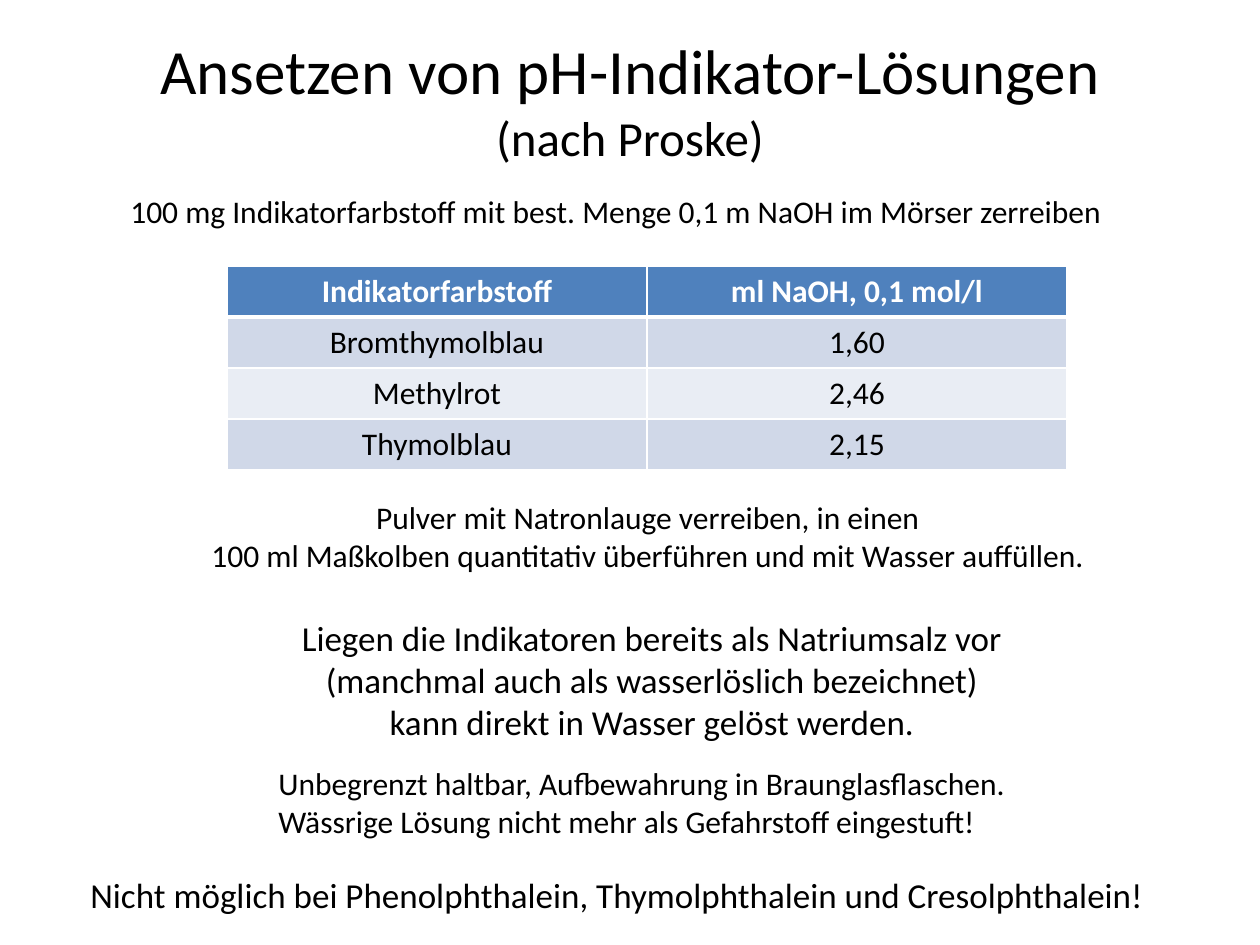
"""Build a slide on preparing pH indicator solutions."""
from lxml import etree
from pptx import Presentation
from pptx.dml.color import RGBColor
from pptx.enum.text import MSO_ANCHOR, PP_ALIGN
from pptx.oxml.ns import qn
from pptx.util import Emu, Pt

LEFT, CENTER = PP_ALIGN.LEFT, PP_ALIGN.CENTER
TOP, MIDDLE = MSO_ANCHOR.TOP, MSO_ANCHOR.MIDDLE
PX = 7257.14
FONT = "Calibri"
BLACK, WHITE, HEADER = "000000", "FFFFFF", "4F81BD"
BANDS = ("D0D8E8", "E9EDF4")

TITLE = [("Ansetzen von pH-Indikator-Lösungen", 36), ("(nach Proske)", 28)]
TITLE_BOX = (63, 20, 1134, 158)

TEXTS = [
    ((118, 186, 1008, 50), 18, LEFT,
     ["100 mg Indikatorfarbstoff mit best. Menge 0,1 m NaOH im Mörser zerreiben"]),
    ((197, 492, 909, 89), 18, CENTER,
     ["Pulver mit Natronlauge verreiben, in einen ",
      "100 ml Maßkolben quantitativ überführen und mit Wasser auffüllen. "]),
    ((286, 610, 732, 140), 20, CENTER,
     ["Liegen die Indikatoren bereits als Natriumsalz vor",
      "(manchmal auch als wasserlöslich bezeichnet)",
      "kann direkt in Wasser gelöst werden."]),
    ((266, 758, 768, 89), 18, LEFT,
     ["Unbegrenzt haltbar, Aufbewahrung in Braunglasflaschen.",
      "Wässrige Lösung nicht mehr als Gefahrstoff eingestuft!"]),
    ((78, 867, 1089, 55), 20, LEFT,
     ["Nicht möglich bei Phenolphthalein, Thymolphthalein und Cresolphthalein!"]),
]

ROWS = [
    ("Indikatorfarbstoff", "ml NaOH, 0,1 mol/l"),
    ("Bromthymolblau", "1,60"),
    ("Methylrot", "2,46"),
    ("Thymolblau", "2,15"),
]
TABLE_BOX = (227, 266, 840, 204)


def px(value):
    return Emu(round(value * PX))


def color(value):
    return RGBColor.from_string(value)


def add_run(paragraph, text, size, fill=BLACK, bold=False):
    run = paragraph.add_run()
    run.text = text
    for name, value in {"name": FONT, "size": Pt(size), "bold": bold}.items():
        setattr(run.font, name, value)
    run.font.color.rgb = color(fill)


def add_box(slide, box, wrap, anchor):
    frame = slide.shapes.add_textbox(*map(px, box)).text_frame
    frame.word_wrap = wrap
    frame.vertical_anchor = anchor
    return frame


def add_title(slide):
    paragraph = add_box(slide, TITLE_BOX, True, MIDDLE).paragraphs[0]
    paragraph.alignment = CENTER
    for index, (text, size) in enumerate(TITLE):
        if index:
            paragraph.add_line_break()
        add_run(paragraph, text, size)


def add_text(slide, box, size, alignment, lines):
    frame = add_box(slide, box, False, TOP)
    for index, line in enumerate(lines):
        paragraph = frame.add_paragraph() if index else frame.paragraphs[0]
        paragraph.alignment = alignment
        add_run(paragraph, line, size)


def set_borders(cell, widths):
    properties = cell._tc.get_or_add_tcPr()
    for index, (side, width) in enumerate(widths.items()):
        line = etree.Element(qn(f"a:{side}"), w=str(Pt(width)))
        fill = etree.SubElement(line, qn("a:solidFill"))
        etree.SubElement(fill, qn("a:srgbClr"), val=WHITE)
        properties.insert(index, line)


def add_indicator_table(slide):
    table = slide.shapes.add_table(len(ROWS), len(ROWS[0]), *map(px, TABLE_BOX)).table
    for row_index, row in enumerate(ROWS):
        header = row_index == 0
        for column_index, text in enumerate(row):
            cell = table.cell(row_index, column_index)
            cell.fill.solid()
            cell.fill.fore_color.rgb = color(HEADER if header else BANDS[(row_index - 1) % 2])
            paragraph = cell.text_frame.paragraphs[0]
            paragraph.alignment = CENTER
            add_run(paragraph, text, 18, WHITE if header else BLACK, header)
            set_borders(cell, {"lnL": 1, "lnR": 1, "lnT": 3 if row_index == 1 else 1,
                               "lnB": 3 if header else 1})


def main():
    presentation = Presentation()
    presentation.slide_width, presentation.slide_height = px(1260), px(945)
    slide = presentation.slides.add_slide(presentation.slide_layouts[6])
    add_title(slide)
    add_indicator_table(slide)
    for text in TEXTS:
        add_text(slide, *text)
    presentation.save("out.pptx")


if __name__ == "__main__":
    main()
